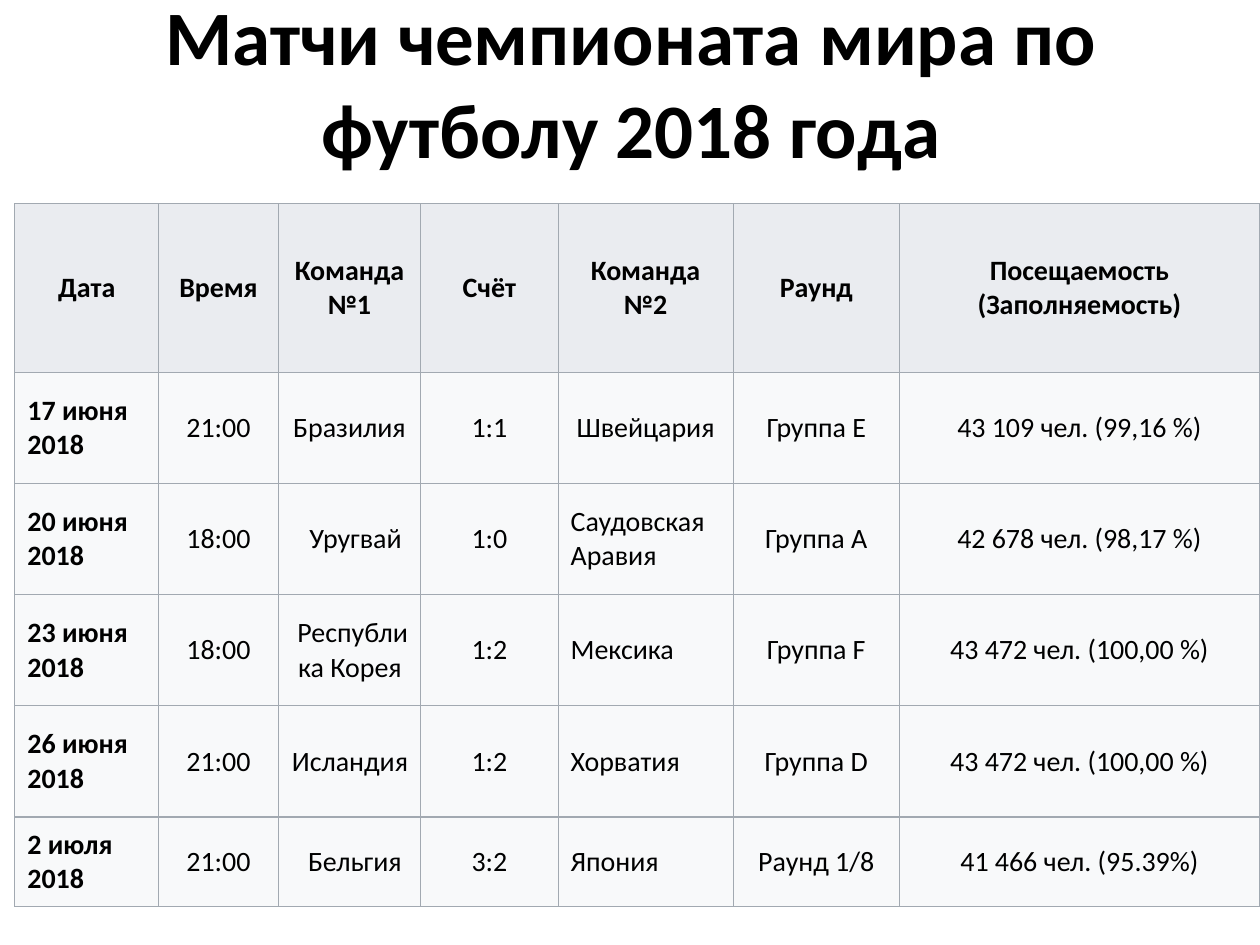
"""Build a slide with a table of 2018 World Cup football matches."""
from lxml import etree
from pptx import Presentation
from pptx.dml.color import RGBColor
from pptx.enum.text import MSO_ANCHOR, PP_ALIGN
from pptx.oxml.ns import qn
from pptx.util import Cm, Pt

LEFT, CENTER, RIGHT = PP_ALIGN.LEFT, PP_ALIGN.CENTER, PP_ALIGN.RIGHT
MIDDLE = MSO_ANCHOR.MIDDLE

TITLE = "Матчи чемпионата мира по футболу 2018 года"
HEADER = ("Дата", "Время", "Команда №1", "Счёт", "Команда №2", "Раунд",
          "Посещаемость (Заполняемость)")
MATCHES = [
    ("17 июня 2018", "21:00", "Бразилия ", "1:1", "Швейцария", "Группа E", "43 109 чел. (99,16 %)"),
    ("20 июня 2018", "18:00", "Уругвай ", "1:0", "Саудовская Аравия", "Группа A", "42 678 чел. (98,17 %)"),
    ("23 июня 2018", "18:00", "Республика Корея ", "1:2", "Мексика", "Группа F", "43 472 чел. (100,00 %)"),
    ("26 июня 2018", "21:00", "Исландия ", "1:2", "Хорватия", "Группа D", "43 472 чел. (100,00 %)"),
    ("2 июля 2018", "21:00", "Бельгия ", "3:2", "Япония", "Раунд 1/8", "41 466 чел. (95.39%)"),
]
COLUMN_WIDTHS = (2.9, 2.41, 2.87, 2.77, 3.53, 3.35, 7.26)
ROW_HEIGHTS = (3.4, 2.24, 2.24, 2.24, 2.24, 1.8)
HEADER_ALIGNMENT = (CENTER,) * 7
FIRST_ALIGNMENT = (LEFT,) + (CENTER,) * 6
MATCH_ALIGNMENT = (LEFT, CENTER, RIGHT, CENTER, LEFT, CENTER, CENTER)
ALIGNMENTS = [HEADER_ALIGNMENT, FIRST_ALIGNMENT] + [MATCH_ALIGNMENT] * 4
HEADER_FILL, MATCH_FILL, BORDER, INK = "EAECF0", "F8F9FA", "A2A9B1", "000000"


def color(value):
    return RGBColor.from_string(value)


def write(text_frame, text, alignment, size, bold):
    paragraph = text_frame.paragraphs[0]
    paragraph.alignment = alignment
    run = paragraph.add_run()
    run.text = text
    font_format = {"name": "Calibri", "size": Pt(size), "bold": bold}
    for name, value in font_format.items():
        setattr(run.font, name, value)
    run.font.color.rgb = color(INK)


def add_borders(cell):
    properties = cell._tc.get_or_add_tcPr()
    for position, side in enumerate(("a:lnL", "a:lnR", "a:lnT", "a:lnB")):
        line = etree.Element(qn(side), w=str(Pt(0.75)))
        fill = etree.SubElement(line, qn("a:solidFill"))
        etree.SubElement(fill, qn("a:srgbClr"), val=BORDER)
        properties.insert(position, line)


def add_title(slide):
    box = slide.shapes.add_textbox(Cm(1.3), Cm(0.05), Cm(22.86), Cm(3.18))
    for name, value in {"word_wrap": True, "vertical_anchor": MIDDLE}.items():
        setattr(box.text_frame, name, value)
    write(box.text_frame, TITLE, CENTER, 44, True)


def add_matches(slide):
    rows = [HEADER] + MATCHES
    table = slide.shapes.add_table(
        len(rows), len(HEADER), Cm(0.3), Cm(4.11),
        Cm(sum(COLUMN_WIDTHS)), Cm(sum(ROW_HEIGHTS))).table
    for column, width in zip(table.columns, COLUMN_WIDTHS):
        column.width = Cm(width)
    for row, height in zip(table.rows, ROW_HEIGHTS):
        row.height = Cm(height)
    for row_index, (texts, alignments) in enumerate(zip(rows, ALIGNMENTS)):
        for column_index, (text, alignment) in enumerate(zip(texts, alignments)):
            cell = table.cell(row_index, column_index)
            cell.vertical_anchor = MIDDLE
            cell.fill.solid()
            cell.fill.fore_color.rgb = color(MATCH_FILL if row_index else HEADER_FILL)
            add_borders(cell)
            write(cell.text_frame, text, alignment, 16, row_index == 0 or column_index == 0)


def main():
    presentation = Presentation()
    presentation.slide_width, presentation.slide_height = Cm(25.4), Cm(19.05)
    slide = presentation.slides.add_slide(presentation.slide_layouts[6])
    add_title(slide)
    add_matches(slide)
    presentation.save("out.pptx")


if __name__ == "__main__":
    main()
